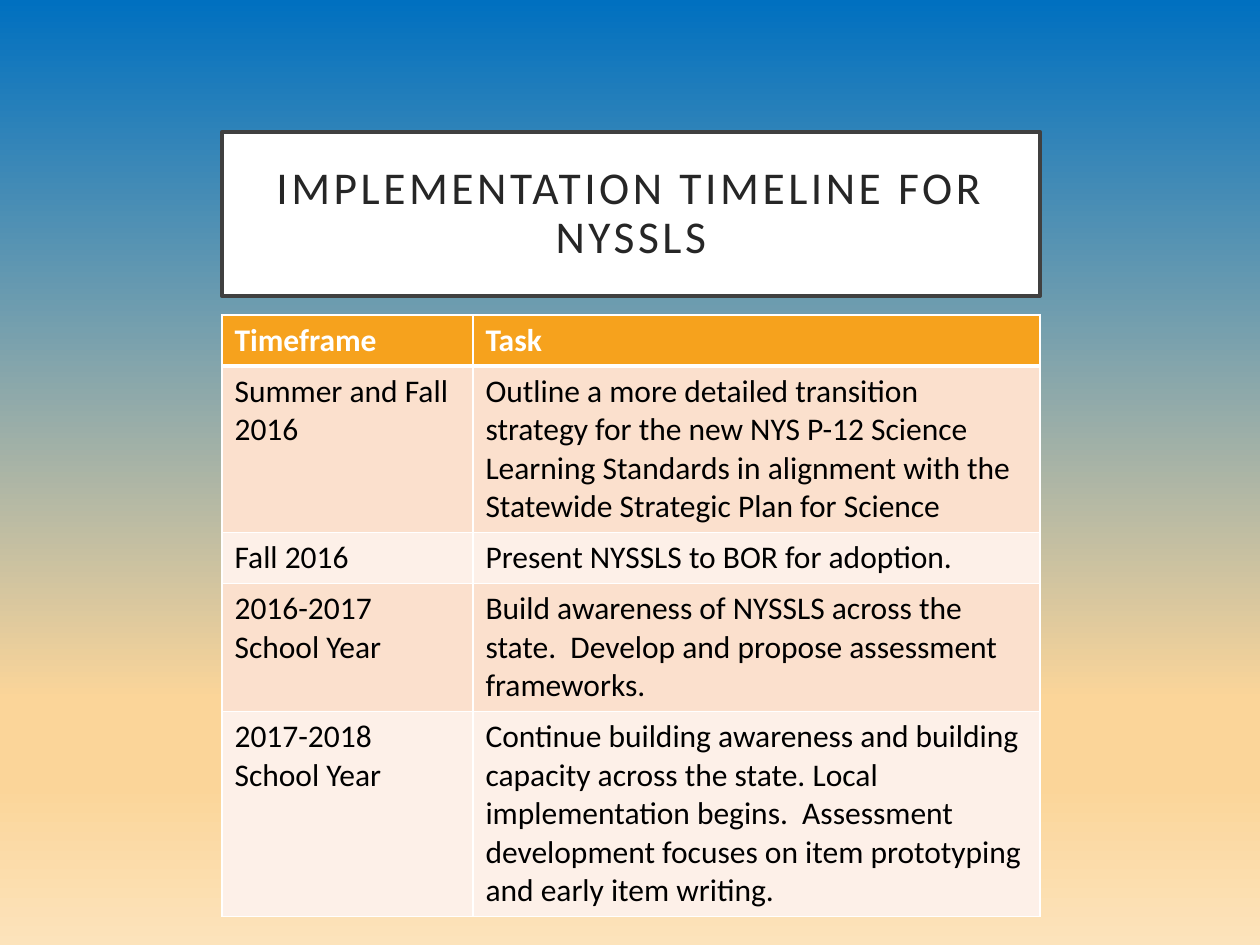
from dataclasses import dataclass

import lxml.etree
import pptx
import pptx.dml.color
import pptx.enum.shapes
import pptx.enum.text
import pptx.oxml.ns
import pptx.util

EMU_PER_PX = 914400 / 126
FONT = "Calibri"
WHITE = "FFFFFF"
HEADER_FILL = "F6A21D"
BAND_FILLS = ("FBE0CD", "FDF0E8")
SKY_TO_SAND = ((0, "0070C0"), (74, "FBD599"), (83, "FBD599"), (100, "FCE3BB"))
LEFT, WIDTH = 222, 818
TITLE_TOP, TITLE_HEIGHT = 132, 164
TABLE_TOP, TABLE_HEIGHT, ROW_HEIGHT = 315, 592, 50
COLUMN_WIDTHS = (251, 567)


@dataclass(frozen=True)
class Phase:
    timeframe: str
    task: str


PHASES = (
    Phase("Timeframe", "Task"),
    Phase(
        "Summer and Fall 2016",
        "Outline a more detailed transition strategy for the new NYS P-12 Science "
        "Learning Standards in alignment with the Statewide Strategic Plan for Science",
    ),
    Phase("Fall 2016", "Present NYSSLS to BOR for adoption."),
    Phase(
        "2016-2017 School Year",
        "Build awareness of NYSSLS across the state.  Develop and propose assessment frameworks.",
    ),
    Phase(
        "2017-2018 School Year",
        "Continue building awareness and building capacity across the state. "
        "Local implementation begins.  Assessment development focuses on item "
        "prototyping and early item writing.",
    ),
)


def px(length: int) -> pptx.util.Emu:
    """Turn px into EMU."""
    return pptx.util.Emu(round(length * EMU_PER_PX))


def color(value: str) -> pptx.dml.color.RGBColor:
    """Turn a hex string into a colour."""
    return pptx.dml.color.RGBColor.from_string(value)


def add_child(parent, tag: str, **attributes: str):
    """Append a DrawingML element to its parent."""
    child = lxml.etree.SubElement(parent, pptx.oxml.ns.qn(tag))
    for name, value in attributes.items():
        child.set(name, value)
    return child


def style_run(run, size: int, ink: str, bold: bool = False) -> None:
    """Set the font of one run."""
    run.font.name = FONT
    run.font.size = pptx.util.Pt(size)
    run.font.bold = bold
    run.font.color.rgb = color(ink)


def paint_background(slide) -> None:
    """Fill the slide with the vertical gradient."""
    fill = slide.background.fill
    fill.gradient()
    fill.gradient_angle = 270
    stops = slide.element.find(".//" + pptx.oxml.ns.qn("a:gsLst"))
    for stop in list(stops):
        stops.remove(stop)
    for percent, value in SKY_TO_SAND:
        stop = add_child(stops, "a:gs", pos=str(percent * 1000))
        add_child(stop, "a:srgbClr", val=value)


def add_title(slide, wording: str) -> None:
    """Draw the framed title."""
    title = slide.shapes.add_shape(
        pptx.enum.shapes.MSO_SHAPE.RECTANGLE,
        px(LEFT), px(TITLE_TOP), px(WIDTH), px(TITLE_HEIGHT),
    )
    title.shadow.inherit = False
    title.fill.solid()
    title.fill.fore_color.rgb = color(WHITE)
    title.line.color.rgb = color("404040")
    title.line.width = pptx.util.Pt(2.5)
    frame = title.text_frame
    frame.text = wording
    frame.word_wrap = True
    frame.vertical_anchor = pptx.enum.text.MSO_ANCHOR.MIDDLE
    frame.margin_left = frame.margin_right = px(25)
    frame.margin_top = frame.margin_bottom = px(25)
    paragraph = frame.paragraphs[0]
    paragraph.alignment = pptx.enum.text.PP_ALIGN.CENTER
    paragraph.line_spacing = 0.9
    style_run(paragraph.runs[0], 26, "262626")
    paragraph.runs[0].font._element.set("spc", "200")


def set_borders(cell, bottom: int, top: int) -> None:
    """Give a cell white borders, with widths in points."""
    properties = cell._tc.get_or_add_tcPr()
    widths = {"a:lnL": 1, "a:lnR": 1, "a:lnT": top, "a:lnB": bottom}
    for position, (tag, points) in enumerate(widths.items()):
        border = add_child(properties, tag, w=str(pptx.util.Pt(points)))
        add_child(add_child(border, "a:solidFill"), "a:srgbClr", val=WHITE)
        properties.insert(position, border)


def add_timeline(slide, phases: tuple[Phase, ...]) -> None:
    """Draw the table of phases."""
    frame = slide.shapes.add_table(
        len(phases), len(COLUMN_WIDTHS),
        px(LEFT), px(TABLE_TOP), px(WIDTH), px(TABLE_HEIGHT),
    )
    timeline = frame.table
    for column, width in zip(timeline.columns, COLUMN_WIDTHS):
        column.width = px(width)
    for index, phase in enumerate(phases):
        timeline.rows[index].height = px(ROW_HEIGHT)
        header = index == 0
        fill = HEADER_FILL if header else BAND_FILLS[(index - 1) % 2]
        for cell, wording in zip(timeline.rows[index].cells, (phase.timeframe, phase.task)):
            cell.text_frame.text = wording
            style_run(
                cell.text_frame.paragraphs[0].runs[0],
                18, WHITE if header else "000000", header,
            )
            cell.fill.solid()
            cell.fill.fore_color.rgb = color(fill)
            set_borders(cell, bottom=3 if header else 1, top=3 if index == 1 else 1)
    frame.height = px(TABLE_HEIGHT)


def main() -> None:
    """Build and save the slide."""
    presentation = pptx.Presentation()
    presentation.slide_width = px(1260)
    presentation.slide_height = px(945)
    slide = presentation.slides.add_slide(presentation.slide_layouts[6])
    paint_background(slide)
    add_title(slide, "IMPLEMENTATION TIMELINE FOR NYSSLS")
    add_timeline(slide, PHASES)
    presentation.save("out.pptx")


if __name__ == "__main__":
    main()
